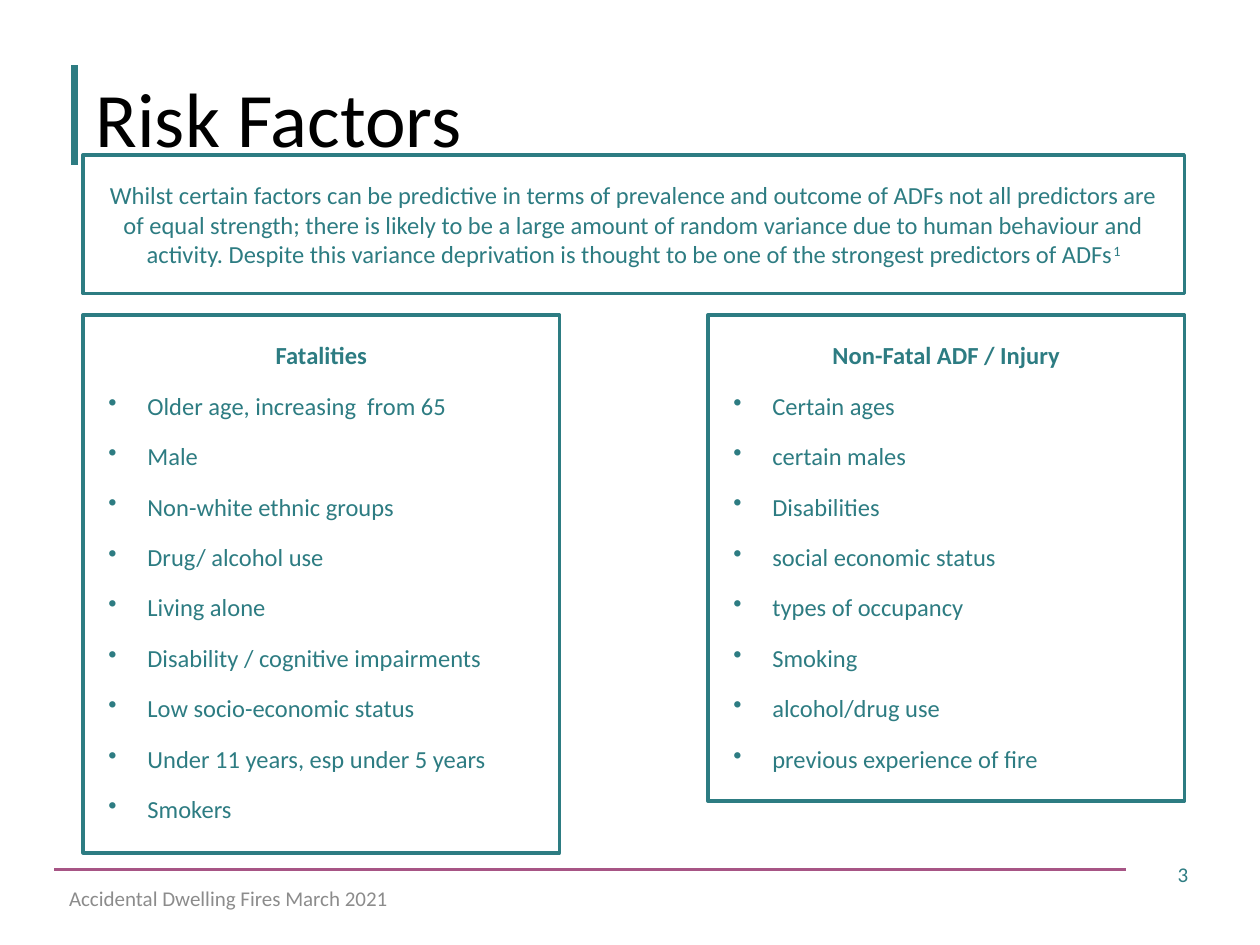
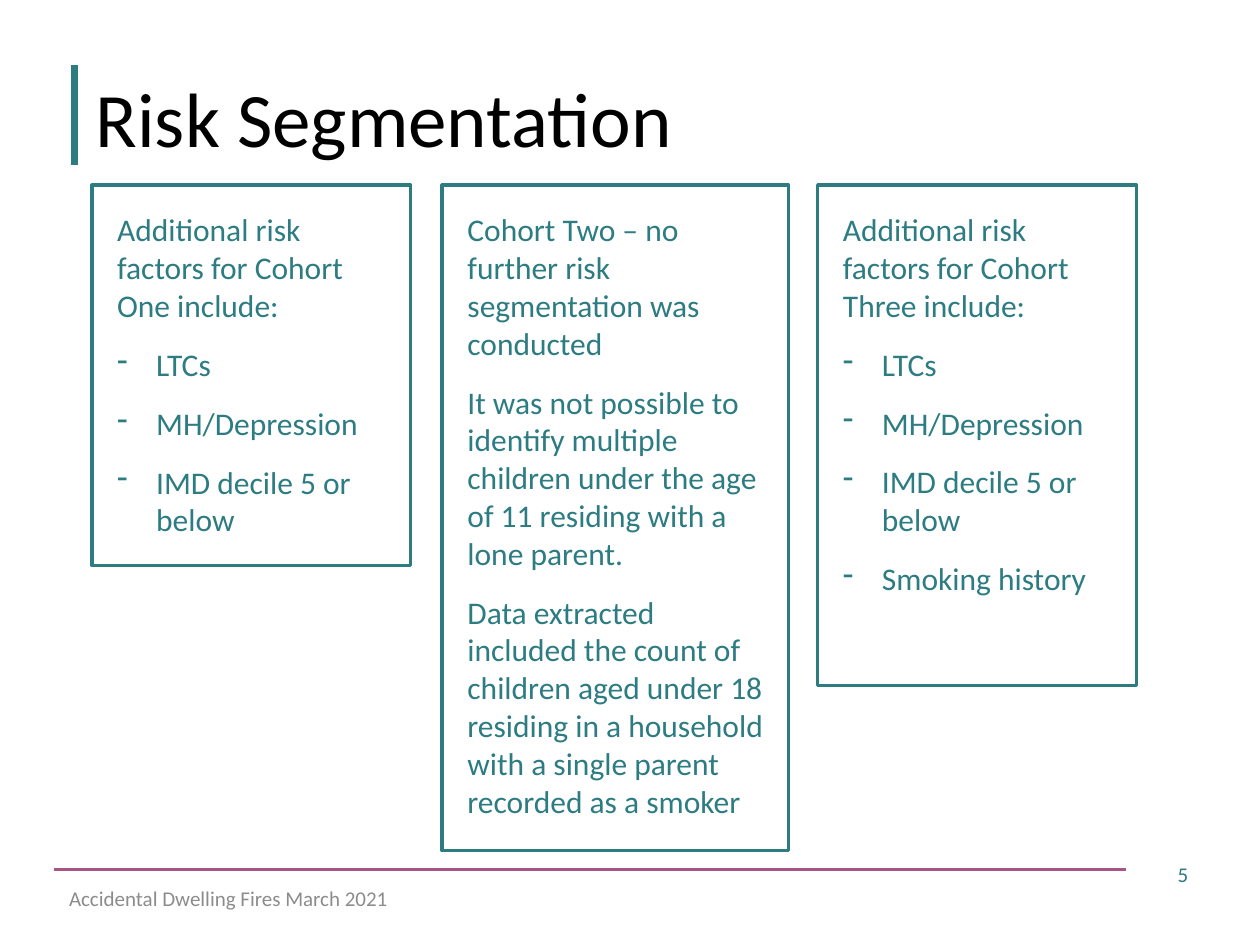
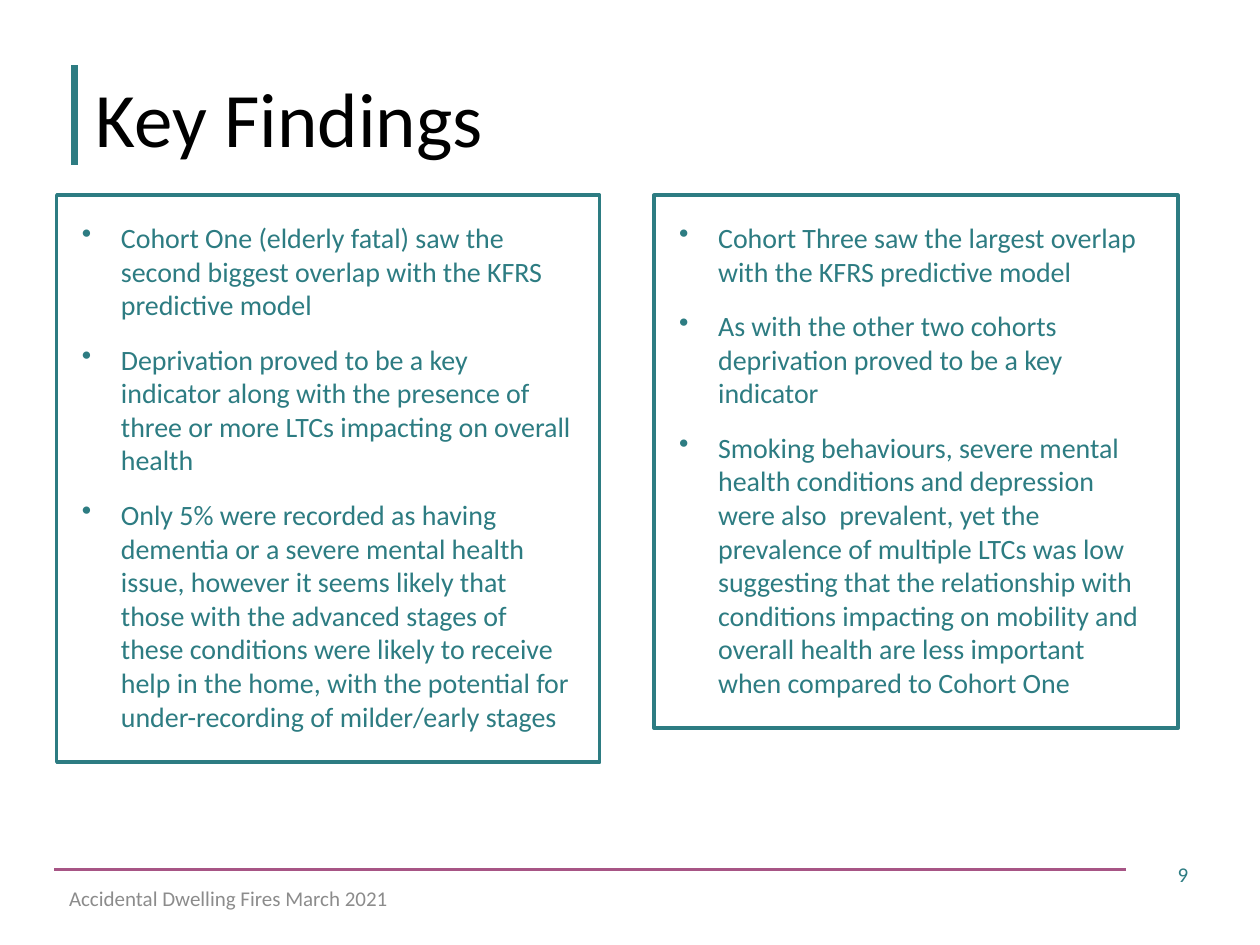
from lxml.etree import SubElement
from pptx import Presentation
from pptx.dml.color import RGBColor
from pptx.enum.shapes import MSO_CONNECTOR, MSO_SHAPE
from pptx.enum.text import MSO_ANCHOR, PP_ALIGN
from pptx.oxml.ns import qn
from pptx.util import Pt

PX = 9144
TEAL = RGBColor(0x2D, 0x7C, 0x82)
PLUM = RGBColor(0xA7, 0x55, 0x85)
GREY = RGBColor(0x8C, 0x8C, 0x8C)
BLACK = RGBColor(0, 0, 0)
WHITE = RGBColor(255, 255, 255)
FONT = "Calibri"
FOOTER = "Accidental Dwelling Fires March 2021"
INSET = 20
INDENT = 31

RULES = [
    ((59, 52, 59, 131), TEAL, 4),
    ((43, 690, 894, 690), PLUM, 2),
]

OVERVIEW = (
    "Whilst certain factors can be predictive in terms of prevalence and outcome of ADFs "
    "not all predictors are of equal strength; there is likely to be a large amount of "
    "random variance due to human behaviour and activity. Despite this variance deprivation "
    "is thought to be one of the strongest predictors of ADFs"
)

FATALITIES = [
    "Older age, increasing  from 65",
    "Male",
    "Non-white ethnic groups",
    "Drug/ alcohol use",
    "Living alone",
    "Disability / cognitive impairments",
    "Low socio-economic status",
    "Under 11 years, esp under 5 years",
    "Smokers",
]
INJURIES = [
    "Certain ages",
    "certain males",
    "Disabilities",
    "social economic status",
    "types of occupancy",
    "Smoking",
    "alcohol/drug use",
    "previous experience of fire",
]
SHARED_RISKS = ["LTCs", "MH/Depression", "IMD decile 5 or below"]
COHORT_TWO = [
    "It was not possible to identify multiple children under the age of 11 residing with a "
    "lone parent.",
    "Data extracted included the count of children aged under 18 residing in a household "
    "with a single parent recorded as a smoker",
]
COHORT_ONE_FINDINGS = [
    "Cohort One (elderly fatal) saw the second biggest overlap with the KFRS predictive model",
    "Deprivation proved to be a key indicator along with the presence of three or more LTCs "
    "impacting on overall health",
    "Only 5% were recorded as having dementia or a severe mental health issue, however it "
    "seems likely that those with the advanced stages of these conditions were likely to "
    "receive help in the home, with the potential for under-recording of milder/early stages",
]
COHORT_THREE_FINDINGS = [
    "Cohort Three saw the largest overlap with the KFRS predictive model",
    "As with the other two cohorts deprivation proved to be a key indicator",
    "Smoking behaviours, severe mental health conditions and depression were also  prevalent, "
    "yet the prevalence of multiple LTCs was low suggesting that the relationship with "
    "conditions impacting on mobility and overall health are less important when compared to "
    "Cohort One",
]

SLIDES = [
    ("Risk Factors", "3", 14, True, [
        ((66, 250, 378, 427), "Fatalities", "•", FATALITIES),
        ((562, 250, 378, 386), "Non-Fatal ADF / Injury", "•", INJURIES),
    ]),
    ("Risk Segmentation", "5", 18, False, [
        ((73, 147, 253, 302), "Additional risk factors for Cohort One include:", "-",
         SHARED_RISKS),
        ((351, 147, 275, 528), "Cohort Two – no further risk segmentation was conducted", None,
         COHORT_TWO),
        ((649, 147, 253, 397), "Additional risk factors for Cohort Three include:", "-",
         SHARED_RISKS + ["Smoking history"]),
    ]),
    ("Key Findings", "9", 16, False, [
        ((45, 155, 431, 450), None, "•", COHORT_ONE_FINDINGS),
        ((519, 155, 416, 423), None, "•", COHORT_THREE_FINDINGS),
    ]),
]


def add_label(slide, box, text, size, color, alignment=PP_ALIGN.LEFT):
    shape = slide.shapes.add_textbox(*[value * PX for value in box])
    frame = shape.text_frame
    frame.word_wrap = True
    frame.vertical_anchor = MSO_ANCHOR.MIDDLE
    paragraph = frame.paragraphs[0]
    paragraph.text = text
    paragraph.alignment = alignment
    paragraph.font.name = FONT
    paragraph.font.size = Pt(size)
    paragraph.font.color.rgb = color


def add_panel(slide, box, size, heading, marker, items, centred):
    shape = slide.shapes.add_shape(MSO_SHAPE.RECTANGLE, *[value * PX for value in box])
    shape.shadow.inherit = False
    shape.fill.solid()
    shape.fill.fore_color.rgb = WHITE
    shape.line.color.rgb = TEAL
    shape.line.width = Pt(2)
    frame = shape.text_frame
    frame.word_wrap = True
    frame.vertical_anchor = MSO_ANCHOR.TOP
    frame.margin_left = frame.margin_right = INSET * PX
    frame.margin_top = frame.margin_bottom = INSET * PX
    lines = [(heading, None)] if heading else []
    lines += [(item, marker) for item in items]
    for index, (text, bullet) in enumerate(lines):
        paragraph = frame.add_paragraph() if index else frame.paragraphs[0]
        paragraph.text = text
        is_centred = centred and index == 0
        paragraph.alignment = PP_ALIGN.CENTER if is_centred else PP_ALIGN.LEFT
        paragraph.space_before = Pt(6 if index else 0)
        paragraph.space_after = Pt(6)
        if bullet:
            properties = paragraph._p.get_or_add_pPr()
            properties.set("marL", str(INDENT * PX))
            properties.set("indent", str(-INDENT * PX))
            SubElement(properties, qn("a:buChar")).set("char", bullet)
        paragraph.font.name = FONT
        paragraph.font.size = Pt(size)
        paragraph.font.color.rgb = TEAL
        paragraph.font.bold = is_centred and bool(items)
    return frame


presentation = Presentation()
presentation.slide_width = 1000 * PX
presentation.slide_height = 750 * PX

for title, number, size, centred, panels in SLIDES:
    slide = presentation.slides.add_slide(presentation.slide_layouts[6])
    for ends, color, weight in RULES:
        rule = slide.shapes.add_connector(
            MSO_CONNECTOR.STRAIGHT, *[value * PX for value in ends])
        rule.line.color.rgb = color
        rule.line.width = Pt(weight)
        SubElement(rule._element.spPr, qn("a:effectLst"))
    add_label(slide, (66, 30, 859, 125), title, 44, BLACK)
    add_label(slide, (45, 693, 317, 40), FOOTER, 12, GREY)
    add_label(slide, (720, 674, 233, 40), number, 12, TEAL, PP_ALIGN.RIGHT)
    for box, heading, marker, items in panels:
        add_panel(slide, box, size, heading, marker, items, centred)

risk_slide = presentation.slides[0]
overview = add_panel(risk_slide, (66, 123, 874, 110), 14, OVERVIEW, None, [], True)
reference = overview.paragraphs[0].add_run()
reference.text = "1"
reference._r.get_or_add_rPr().set("baseline", "30000")

presentation.save("out.pptx")
